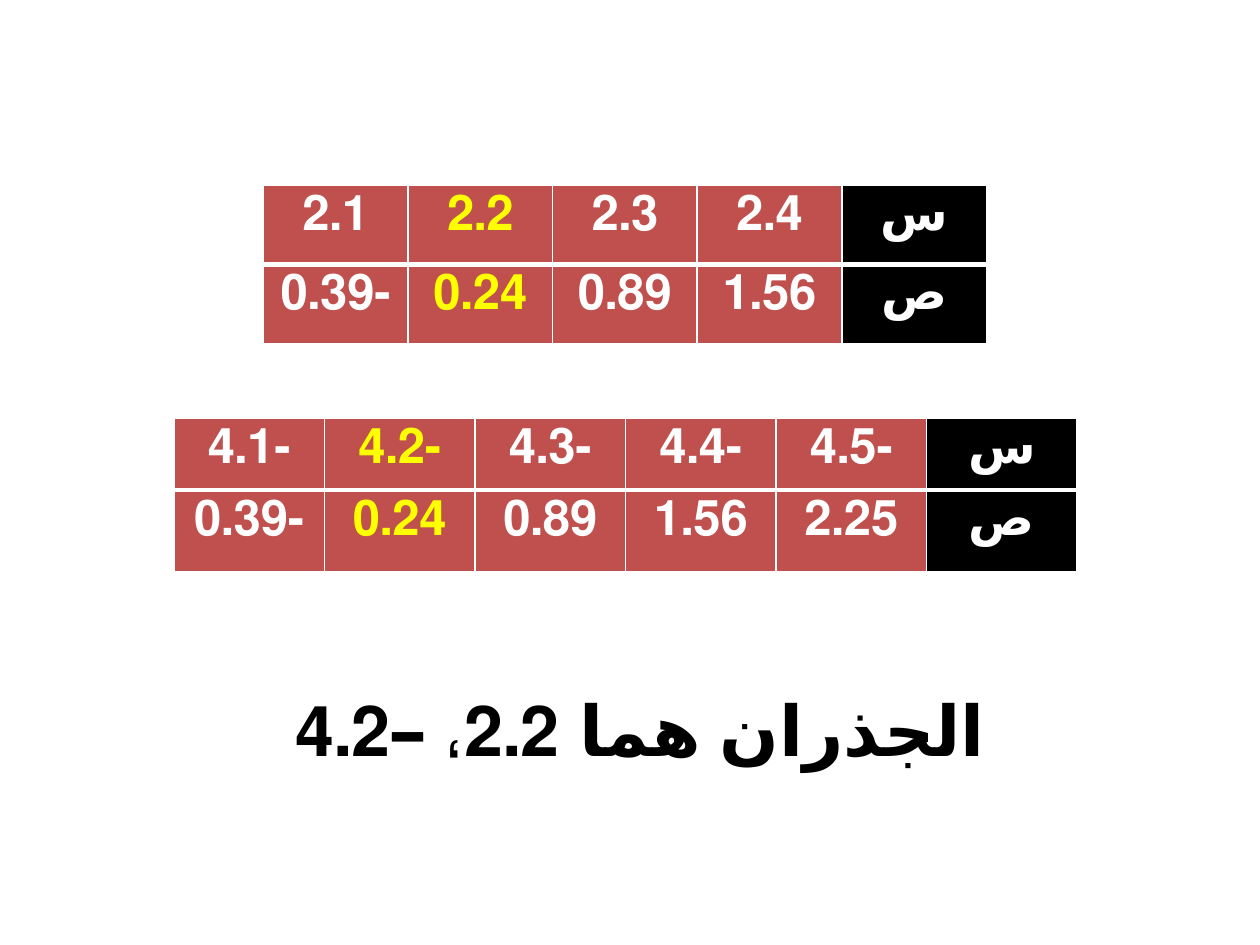
"""Build a slide with two value tables and the roots they lead to."""
import pptx
import pptx.dml.color
import pptx.enum.lang
import pptx.enum.text
import pptx.oxml
import pptx.oxml.ns
import pptx.util
from pptx.util import Inches

WHITE = pptx.dml.color.RGBColor(0xFF, 0xFF, 0xFF)
BLACK = pptx.dml.color.RGBColor(0x00, 0x00, 0x00)
RED = pptx.dml.color.RGBColor(0xC0, 0x50, 0x4D)
YELLOW = pptx.dml.color.RGBColor(0xFF, 0xFF, 0x00)
FONT = "Arial"
ROOT_COLUMN = 1


def write_rtl(tf, text, size, color):
    """Write one centred, bold, right-to-left paragraph."""
    p = tf.paragraphs[0]
    p.alignment = pptx.enum.text.PP_ALIGN.CENTER
    p._p.get_or_add_pPr().set("rtl", "1")
    r = p.add_run()
    r.text = text
    r.font.size = pptx.util.Pt(size)
    r.font.bold = True
    r.font.name = FONT
    r.font.color.rgb = color
    r.font.language_id = pptx.enum.lang.MSO_LANGUAGE_ID.ARABIC


def set_borders(cell, top, bottom):
    """Give a cell white borders, one point wide at the sides."""
    tc_pr = cell._tc.get_or_add_tcPr()
    for side, width in (("L", 1), ("R", 1), ("T", top), ("B", bottom)):
        tc_pr.append(pptx.oxml.parse_xml(
            f'<a:ln{side} {pptx.oxml.ns.nsdecls("a")} w="{pptx.util.Pt(width)}">'
            f'<a:solidFill><a:srgbClr val="{WHITE}"/></a:solidFill></a:ln{side}>'))


def add_value_table(s, left, top, width, heights, rows):
    """Add a table whose last column holds the variable names."""
    count = len(rows[0])
    table = s.shapes.add_table(
        len(rows), count, Inches(left), Inches(top),
        Inches(width), Inches(sum(heights))).table
    for column in table.columns:
        column.width = Inches(width / count)
    for i, (height, values) in enumerate(zip(heights, rows)):
        table.rows[i].height = Inches(height)
        for j, value in enumerate(values):
            cell = table.cell(i, j)
            set_borders(cell, *((1, 3) if i == 0 else (3, 1)))
            cell.fill.solid()
            cell.fill.fore_color.rgb = BLACK if j == count - 1 else RED
            color = YELLOW if j == ROOT_COLUMN else WHITE
            write_rtl(cell.text_frame, value, 28, color)


def add_conclusion(s, text):
    """Add the line that states the roots."""
    tf = s.shapes.add_textbox(
        Inches(1.85), Inches(5.4), Inches(6.46), Inches(0.77)).text_frame
    tf.word_wrap = True
    tf.auto_size = pptx.enum.text.MSO_AUTO_SIZE.SHAPE_TO_FIT_TEXT
    write_rtl(tf, text, 40, BLACK)


def main():
    """Build and save the slide."""
    prs = pptx.Presentation()
    prs.slide_width = Inches(10)
    prs.slide_height = Inches(7.5)
    s = prs.slides.add_slide(prs.slide_layouts[6])
    add_conclusion(s, "الجذران هما 2.2، –4.2")
    add_value_table(s, 2.09, 1.47, 5.74, (0.63, 0.63), (
        ("2.1", "2.2", "2.3", "2.4", "س"),
        ("-0.39", "0.24", "0.89", "1.56", "ص")))
    add_value_table(s, 1.38, 3.32, 7.17, (0.57, 0.65), (
        ("-4.1", "-4.2", "-4.3", "-4.4", "-4.5", "س"),
        ("-0.39", "0.24", "0.89", "1.56", "2.25", "ص")))
    prs.save("out.pptx")


if __name__ == "__main__":
    main()
